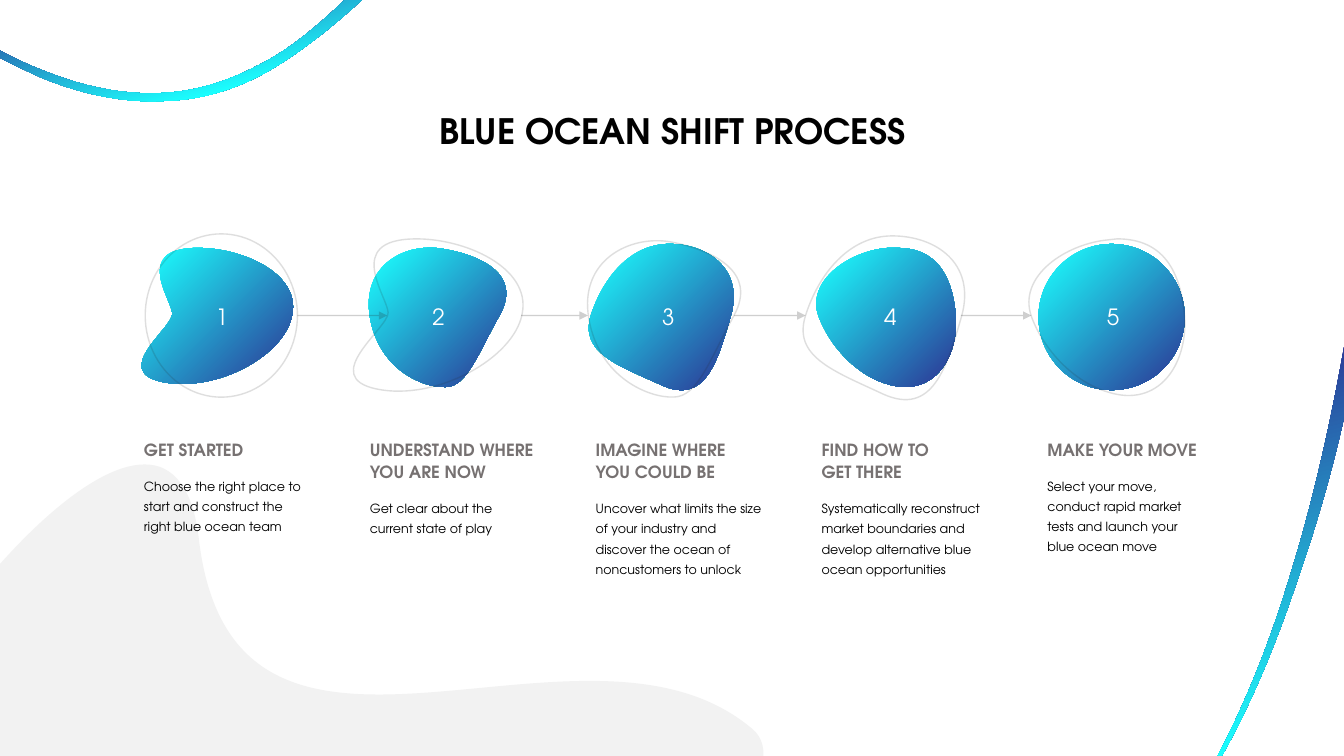
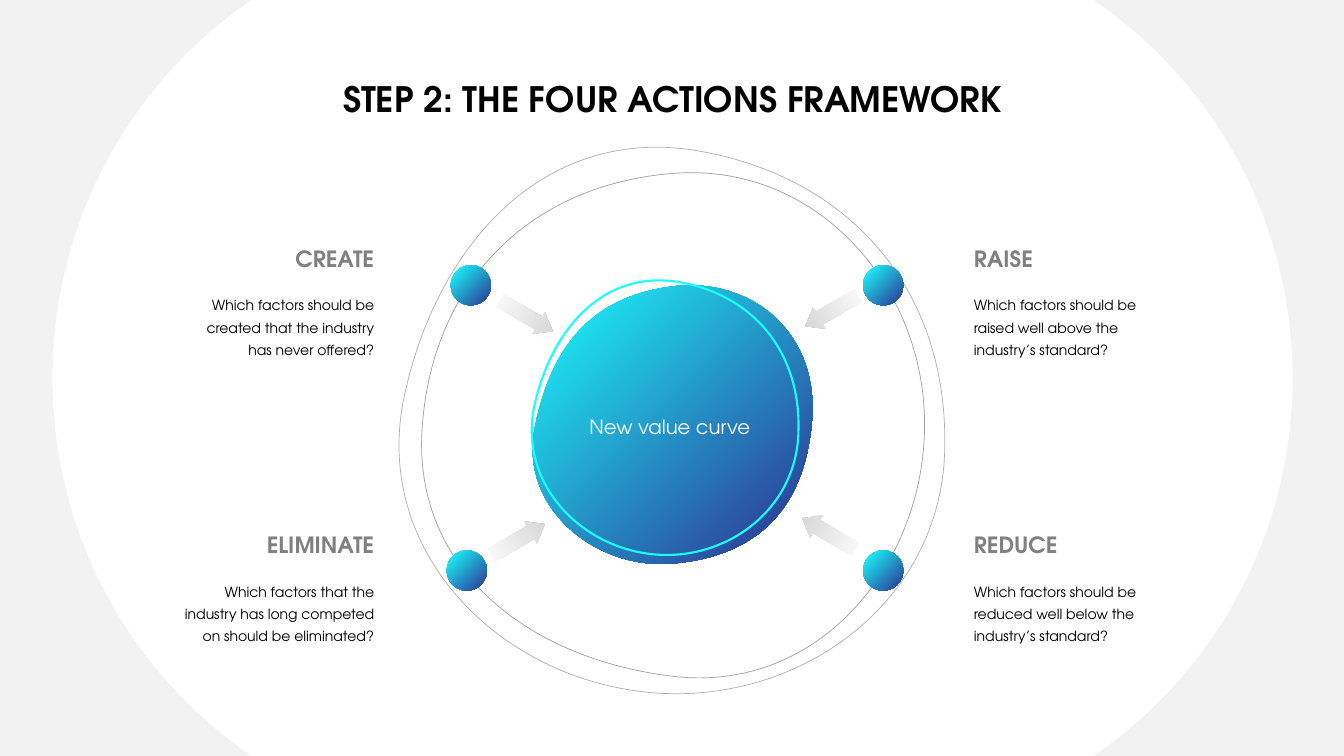
import dataclasses
import pptx
import pptx.dml.color
import pptx.enum.shapes
import pptx.enum.text
import pptx.oxml.ns
import pptx.util
from pptx.util import Inches, Pt

ALIGN = pptx.enum.text.PP_ALIGN
KIND = pptx.enum.shapes.MSO_SHAPE


@dataclasses.dataclass(frozen=True)
class Theme:
    font: str = "TeX Gyre Adventor"
    cyan: str = "1BFEFE"
    navy: str = "2D3192"
    ink: str = "000000"
    white: str = "FFFFFF"
    pale: str = "F2F2F2"
    line: str = "262726"
    arrow: str = "D4D4D4"
    step: str = "767171"
    act: str = "808080"
    title: int = 25
    head: int = 16
    core: int = 14
    name: int = 12
    note: int = 10
    small: int = 9


T = Theme()

# Outlines: a start point, then line ends (2 numbers) or curves (6 numbers).
BLOBS = [
    [(1.94, 2.46), (2.39, 2.45, 2.98, 2.71, 2.9, 3.12), (2.83, 3.53, 2.14, 3.9, 1.61, 3.79),
     (1.09, 3.68, 1.72, 3.25, 1.71, 3.11), (1.7, 2.97, 1.32, 2.47, 1.94, 2.46)],
    [(3.67, 3.15), (3.58, 2.62, 4.03, 2.4, 4.4, 2.47), (4.76, 2.53, 5.18, 2.72, 4.96, 3.12),
     (4.74, 3.51, 4.63, 3.84, 4.42, 3.84), (4.2, 3.85, 3.76, 3.67, 3.67, 3.15)],
    [(5.86, 3.13), (5.98, 2.76, 6.25, 2.42, 6.64, 2.42), (7.02, 2.42, 7.38, 2.67, 7.25, 3.13),
     (7.12, 3.59, 6.99, 4.02, 6.56, 3.82), (6.12, 3.62, 5.75, 3.5, 5.86, 3.13)],
    [(8.88, 2.46), (9.29, 2.45, 9.45, 2.74, 9.48, 3.14), (9.51, 3.57, 9.24, 3.95, 8.8, 3.81),
     (8.49, 3.72, 8.23, 3.43, 8.12, 3.14), (7.99, 2.79, 8.42, 2.49, 8.8, 2.46),
     (8.83, 2.46, 8.85, 2.46, 8.88, 2.46)],
]
RINGS = [
    [(4.11, 2.37), (4.6, 2.36, 5.27, 2.65, 5.18, 3.11), (5.1, 3.56, 4.32, 3.98, 3.74, 3.86),
     (3.15, 3.74, 3.86, 3.25, 3.85, 3.1), (3.84, 2.94, 3.41, 2.38, 4.11, 2.37)],
    [(5.84, 3.16), (5.74, 2.58, 6.25, 2.33, 6.65, 2.4), (7.06, 2.48, 7.52, 2.69, 7.28, 3.13),
     (7.04, 3.57, 6.92, 3.94, 6.68, 3.94), (6.44, 3.95, 5.94, 3.75, 5.84, 3.16)],
    [(7.99, 3.13), (8.12, 2.72, 8.42, 2.34, 8.85, 2.34), (9.28, 2.34, 9.68, 2.61, 9.54, 3.13),
     (9.39, 3.65, 9.25, 4.13, 8.76, 3.91), (8.27, 3.68, 7.86, 3.54, 7.99, 3.13)],
    [(11.08, 2.37), (11.54, 2.37, 11.71, 2.69, 11.75, 3.14), (11.78, 3.62, 11.49, 4.05, 10.99, 3.89),
     (10.65, 3.79, 10.35, 3.47, 10.23, 3.14), (10.09, 2.74, 10.57, 2.42, 10.99, 2.38),
     (11.02, 2.38, 11.05, 2.37, 11.08, 2.37)],
]
WAVE = [(1.58, 4.63), (1.78, 4.7, 1.92, 4.92, 1.97, 5.33), (2.31, 8.33, 5.78, 5.81, 7.46, 7.23),
        (7.89, 7.58, 7.03, 8.65, 5.84, 9.64), (5.75, 9.72), (-1.06, 7.9), (-0.49, 6.21),
        (-0.43, 6.12), (0.28, 5.18, 1.1, 4.47, 1.58, 4.63)]
# Each ribbon: gradient stops, outline
RIBBONS = [
    ((9, 78), [(3.62, -0.03), (3.28, 0.29, 2.9, 0.58, 2.58, 0.75), (2.29, 0.9, 1.98, 0.99, 1.66, 1),
               (1.23, 1.03, 0.8, 0.93, 0.41, 0.77), (0.21, 0.68, 0.02, 0.59, -0.16, 0.48),
               (-0.34, 0.38, -0.52, 0.3, -0.71, 0.24), (-0.71, 0.17),
               (-0.52, 0.24, -0.33, 0.32, -0.14, 0.43), (0.05, 0.53, 0.24, 0.63, 0.43, 0.7),
               (0.82, 0.86, 1.24, 0.95, 1.65, 0.92), (1.97, 0.9, 2.27, 0.8, 2.54, 0.66),
               (2.87, 0.5, 3.16, 0.25, 3.45, -0.03)]),
    ((8, 92), [(13.38, 3.15), (13.38, 3.91), (13.25, 4.55, 13.07, 5.18, 12.86, 5.78),
               (12.65, 6.4, 12.41, 6.99, 12.1, 7.53), (12.06, 7.53),
               (12.36, 6.97, 12.6, 6.35, 12.78, 5.76), (13.05, 4.9, 13.24, 4, 13.38, 3.15)]),
]
ORBITS = [
    (36, [(6.94, 1.5), (8.46, 1.77, 9.4, 2.9, 9.37, 4.44), (9.35, 5.98, 7.92, 7.01, 6.44, 6.87),
          (4.95, 6.73, 3.68, 5.47, 4.01, 3.93), (4.34, 2.39, 5.43, 1.23, 6.94, 1.5)]),
    (44, [(4.19, 4.21), (4.3, 2.79, 5.26, 1.83, 6.68, 1.72), (8.1, 1.61, 9.17, 2.84, 9.17, 4.21),
          (9.17, 5.59, 8.13, 6.88, 6.68, 6.71), (5.23, 6.54, 4.07, 5.63, 4.19, 4.21)]),
]
CORE = [(5.31, 4.22), (5.48, 3.4, 5.89, 2.94, 6.68, 2.84), (7.47, 2.75, 8.15, 3.32, 8.05, 4.22),
        (7.96, 5.11, 7.45, 5.52, 6.68, 5.59), (5.91, 5.66, 5.13, 5.03, 5.31, 4.22)]
HALO = [(6.74, 2.8), (7.48, 2.93, 7.94, 3.5, 7.92, 4.27), (7.91, 5.05, 7.21, 5.57, 6.48, 5.5),
        (5.76, 5.43, 5.14, 4.8, 5.3, 4.03), (5.47, 3.25, 6, 2.67, 6.74, 2.8)]
SIDE = [(0, 0), (2.49, 0), (2.45, 0.03), (1.29, 0.84, 0.52, 2.2, 0.52, 3.75),
        (0.52, 5.3, 1.29, 6.66, 2.45, 7.47), (2.49, 7.5), (0, 7.5)]

# Step name, note, box width, centre of its number
STEPS = [
    ("GET STARTED", "Choose the right place to start and construct the right blue ocean team", 1.86, 2.2),
    ("UNDERSTAND WHERE YOU ARE NOW", "Get clear about the current state of play", 1.86, 4.35),
    ("IMAGINE WHERE YOU COULD BE", "Uncover what limits the size of your industry and discover "
     "the ocean of noncustomers to unlock", 1.86, 6.63),
    ("FIND HOW TO\nGET THERE", "Systematically reconstruct market boundaries and develop "
     "alternative blue ocean opportunities", 1.86, 8.83),
    ("MAKE YOUR MOVE", "Select your move, conduct rapid market tests and launch your blue ocean move",
     1.71, 11.04),
]
LINKS = [(2.95, 3.84), (5.17, 5.83), (7.28, 7.99), (9.53, 10.23)]

# Action, question, text corner, alignment, dot corner, arrow corner, arrow turn
ACTIONS = [
    ("CREATE", "Which factors should be created that the industry has never offered?",
     (1.79, 2.38), ALIGN.RIGHT, (4.47, 2.63), (4.92, 3.01), 30),
    ("RAISE", "Which factors should be raised well above the industry’s standard?",
     (9.66, 2.38), ALIGN.LEFT, (8.56, 2.63), (7.95, 2.96), 150),
    ("ELIMINATE", "Which factors that the industry has long competed on should be eliminated?",
     (1.79, 5.22), ALIGN.RIGHT, (4.43, 5.46), (4.84, 5.23), 330),
    ("REDUCE", "Which factors should be reduced well below the industry’s standard?",
     (9.66, 5.22), ALIGN.LEFT, (8.56, 5.46), (7.92, 5.17), 210),
]


def tint(code):
    return pptx.dml.color.RGBColor.from_string(code)


def add(node, tag, **attrs):
    """Append a DrawingML child to an XML node."""
    child = node.makeelement(pptx.oxml.ns.qn("a:" + tag), attrs)
    node.append(child)
    return child


def veil(shape, opacity):
    """Set the opacity, in percent, of the first colour of a shape."""
    color = next(shape._element.spPr.iter(pptx.oxml.ns.qn("a:srgbClr")))
    add(color, "alpha", val=str(opacity * 1000))


def blend(shape, first, last, stops=(4, 100), angle=45):
    """Fill with a two-colour gradient running clockwise at the angle."""
    shape.fill.gradient()
    shape.fill.gradient_angle = (360 - angle) % 360
    for stop, code, place in zip(shape.fill.gradient_stops, (first, last), stops):
        stop.color.rgb = tint(code)
        stop.position = place / 100


def paint(shape, fill=None, line=None, width=1, opacity=100):
    shape.shadow.inherit = False
    if fill:
        shape.fill.solid()
        shape.fill.fore_color.rgb = tint(fill)
    else:
        shape.fill.background()
    if line:
        shape.line.color.rgb = tint(line)
        shape.line.width = Pt(width)
        if opacity < 100:
            veil(shape, opacity)
    else:
        shape.line.fill.background()
    return shape


def trace(outline, steps=24):
    """Sample an outline, so that its true bounds are known."""
    points = [outline[0]]
    for part in outline[1:]:
        if len(part) == 2:
            points.append(part)
            continue
        knots = [points[-1], part[:2], part[2:4], part[4:]]
        for i in range(1, steps + 1):
            t = i / steps
            mix = ((1 - t) ** 3, 3 * t * (1 - t) ** 2, 3 * t * t * (1 - t), t ** 3)
            points.append(tuple(sum(m * k[a] for m, k in zip(mix, knots)) for a in (0, 1)))
    return points


def curve(shape, outline):
    """Replace the sampled points of a freeform by true curves."""
    route = next(shape._element.spPr.iter(pptx.oxml.ns.qn("a:path")))
    for node in list(route):
        route.remove(node)
    for i, part in enumerate(outline):
        tag = "moveTo" if i == 0 else "lnTo" if len(part) == 2 else "cubicBezTo"
        node = add(route, tag)
        for x, y in zip(part[::2], part[1::2]):
            add(node, "pt", x=str(Inches(x) - shape.left), y=str(Inches(y) - shape.top))
    add(route, "close")


def draw(slide, outline, **look):
    points = [(Inches(x), Inches(y)) for x, y in trace(outline)]
    pen = slide.shapes.build_freeform(*points[0])
    pen.add_line_segments(points[1:])
    shape = pen.convert_to_shape()
    curve(shape, outline)
    return paint(shape, **look)


def stamp(slide, kind, x, y, w, h, **look):
    return paint(slide.shapes.add_shape(kind, Inches(x), Inches(y), Inches(w), Inches(h)), **look)


def write(para, text, size, color=T.ink, bold=False, align=ALIGN.LEFT, lead=None, after=0):
    para.text = text
    para.alignment = align
    para.space_after = Pt(after)
    if lead:
        para.line_spacing = Pt(lead)
    for run in para.runs:
        run.font.name = T.font
        run.font.size = Pt(size)
        run.font.bold = bold
        run.font.color.rgb = tint(color)


def box(slide, x, y, w, h, inset=0.1, wrap=True):
    frame = slide.shapes.add_textbox(Inches(x), Inches(y), Inches(w), Inches(h)).text_frame
    frame.word_wrap = wrap
    frame.margin_left = frame.margin_right = Inches(inset)
    return frame


def start(deck, title, top):
    slide = deck.slides.add_slide(deck.slide_layouts[5])
    head = slide.shapes.title
    head.left, head.top, head.width, head.height = map(Inches, (3.23, top, 6.88, 0.52))
    frame = head.text_frame
    frame.auto_size = pptx.enum.text.MSO_AUTO_SIZE.NONE
    frame.vertical_anchor = pptx.enum.text.MSO_ANCHOR.TOP
    frame.word_wrap = False
    write(frame.paragraphs[0], title, T.title, bold=True, align=ALIGN.CENTER)
    return slide


def link(slide, x1, x2, y):
    """Draw a faint level arrow."""
    kind = pptx.enum.shapes.MSO_CONNECTOR.STRAIGHT
    line = slide.shapes.add_connector(kind, Inches(x1), Inches(y), Inches(x2), Inches(y))
    line.line.color.rgb = tint(T.line)
    line.line.width = Pt(1)
    veil(line, 21)
    props = line._element.spPr
    add(props.find(pptx.oxml.ns.qn("a:ln")), "tailEnd", type="triangle")
    add(props, "effectLst")


def process(deck):
    slide = start(deck, "BLUE OCEAN SHIFT PROCESS", 1.04)
    draw(slide, WAVE, fill=T.pale)
    for stops, outline in RIBBONS:
        blend(draw(slide, outline), T.navy, T.cyan, stops, 75)
    blobs = [draw(slide, outline) for outline in BLOBS]
    blobs.append(stamp(slide, KIND.OVAL, 10.3, 2.42, 1.45, 1.45))
    for blob in blobs:
        blend(blob, T.cyan, T.navy)
    ring = dict(line=T.line, opacity=15)
    stamp(slide, KIND.OVAL, 1.44, 2.32, 1.51, 1.62, **ring)
    for outline in RINGS:
        draw(slide, outline, **ring)
    for x1, x2 in LINKS:
        link(slide, x1, x2, 3.13)
    for i, (name, note, width, mid) in enumerate(STEPS):
        digit = box(slide, mid - 0.17, 2.96, 0.34, 0.37, wrap=False)
        write(digit.paragraphs[0], str(i + 1), T.head, color=T.white, align=ALIGN.CENTER)
        frame = box(slide, 1.33 + 2.24 * i, 4.29, width, 1.5)
        write(frame.paragraphs[0], name, T.name, color=T.step, bold=True, lead=16, after=10)
        write(frame.add_paragraph(), note, T.small, lead=14.4)


def actions(deck):
    slide = start(deck, "STEP 2: THE FOUR ACTIONS FRAMEWORK", 0.72)
    draw(slide, SIDE, fill=T.pale)
    flip = [tuple(13.34 - v if i % 2 == 0 else v for i, v in enumerate(part)) for part in SIDE]
    draw(slide, flip, fill=T.pale)
    for opacity, outline in ORBITS:
        draw(slide, outline, line=T.line, width=0.5, opacity=opacity)
    blend(draw(slide, CORE), T.cyan, T.navy, (0, 97))
    draw(slide, HALO, line=T.cyan, width=1.5)
    core = box(slide, 5.38, 4.07, 2.53, 0.34)
    write(core.paragraphs[0], "New value curve", T.core, color=T.white, align=ALIGN.CENTER)
    for name, ask, spot, align, dot, tail, turn in ACTIONS:
        blend(stamp(slide, KIND.OVAL, *dot, 0.4, 0.4), T.cyan, T.navy)
        arrow = stamp(slide, KIND.STRIPED_RIGHT_ARROW, *tail, 0.6, 0.25)
        arrow.adjustments[0], arrow.adjustments[1] = 0.59, 0.65
        arrow.rotation = turn
        blend(arrow, T.arrow, T.arrow, (0, 97), 0)
        veil(arrow, 0)
        frame = box(slide, *spot, 1.92, 1.21, inset=0)
        write(frame.paragraphs[0], name, T.head, color=T.act, bold=True, align=align, after=14)
        write(frame.add_paragraph(), ask, T.note, align=align, lead=16)


def main():
    deck = pptx.Presentation()
    deck.slide_width, deck.slide_height = Inches(13.33), Inches(7.5)
    process(deck)
    actions(deck)
    deck.save("out.pptx")


if __name__ == "__main__":
    main()
